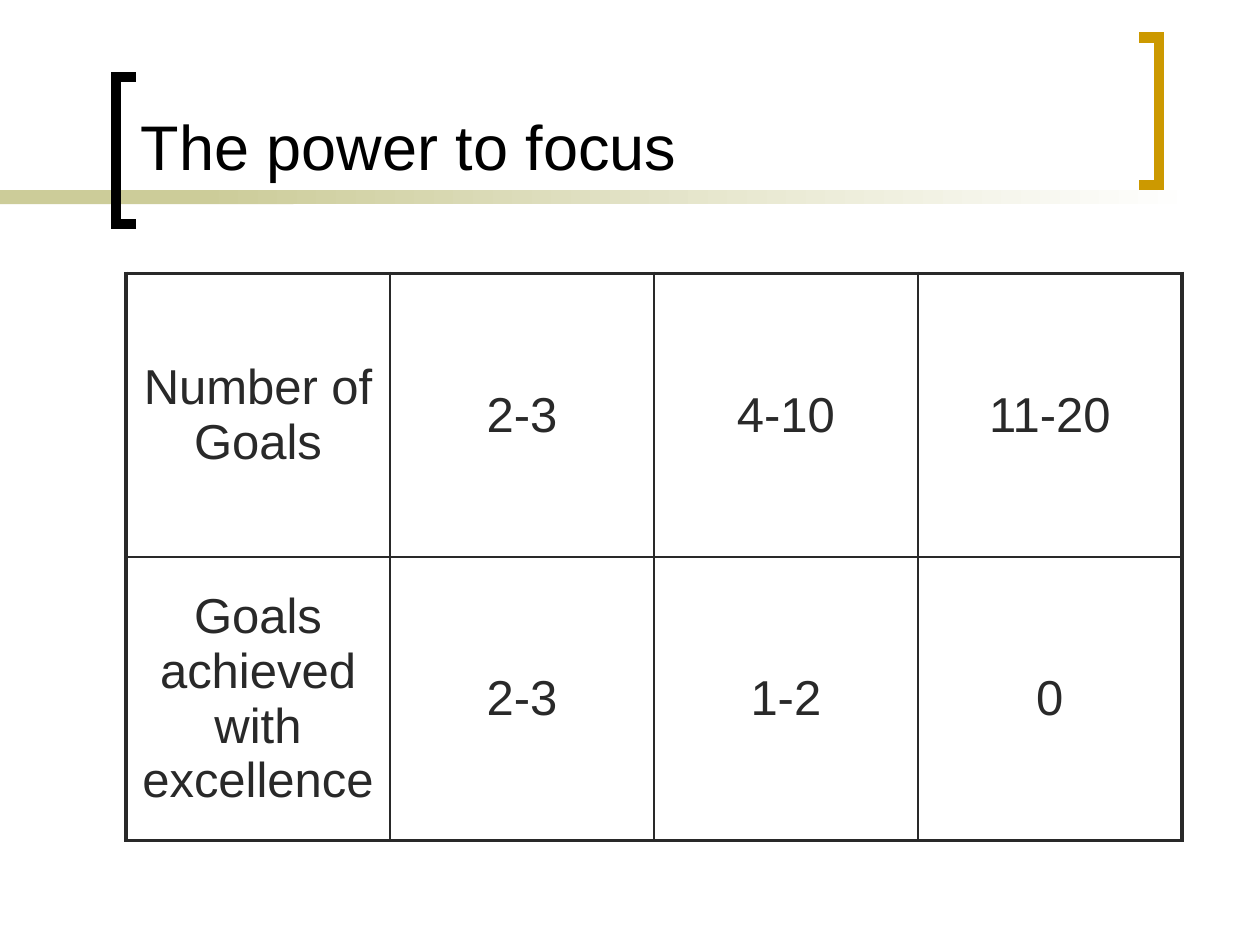
from lxml import etree
from pptx import Presentation
from pptx.dml.color import RGBColor
from pptx.enum.shapes import MSO_SHAPE
from pptx.enum.text import MSO_ANCHOR, PP_ALIGN
from pptx.oxml.ns import qn
from pptx.util import Inches, Pt

RECTANGLE = MSO_SHAPE.RECTANGLE
BOTTOM, MIDDLE = MSO_ANCHOR.BOTTOM, MSO_ANCHOR.MIDDLE
LEFT, CENTER = PP_ALIGN.LEFT, PP_ALIGN.CENTER
COLORS = {"black": "000000", "ink": "292929", "olive": "CCCC99",
          "gold": "CC9900", "white": "FFFFFF"}
THIN, THICK = Pt(1), Pt(2.25)


def write_text(frame, text, size, color, align=LEFT):
    para = frame.paragraphs[0]
    para.alignment = align
    span = para.add_run()
    span.text = text
    span.font.name = "Arial"
    span.font.size = Pt(size)
    span.font.bold = False
    span.font.color.rgb = RGBColor.from_string(COLORS[color])
    return para


def set_borders(cell, widths):
    """Draw the left, right, top and bottom borders, in that order."""
    properties = cell._tc.get_or_add_tcPr()
    for index, (side, width) in enumerate(zip("LRTB", widths)):
        line = etree.Element(qn(f"a:ln{side}"), w=str(width))
        fill = etree.SubElement(line, qn("a:solidFill"))
        etree.SubElement(fill, qn("a:srgbClr"), val=COLORS["ink"])
        properties.insert(index, line)


deck = Presentation()
deck.slide_width, deck.slide_height = Inches(10), Inches(7.5)
page = deck.slides.add_slide(deck.slide_layouts[6])

# Rule under the title: a solid start, then a fade to white
BAR_TOP, BAR_HEIGHT = 1.51, 0.11
for left, width, fades in ((0, 2.33, False), (1.58, 7.92, True)):
    bar = page.shapes.add_shape(RECTANGLE, Inches(left), Inches(BAR_TOP),
                                Inches(width), Inches(BAR_HEIGHT))
    bar.shadow.inherit = False
    bar.line.fill.background()
    if fades:
        bar.fill.gradient()
        bar.fill.gradient_angle = 0
        for stop, position, color in zip(bar.fill.gradient_stops, (0, 1), ("olive", "white")):
            stop.position = position
            stop.color.rgb = RGBColor.from_string(COLORS[color])
    else:
        bar.fill.solid()
        bar.fill.fore_color.rgb = RGBColor.from_string(COLORS["olive"])

# Brackets: the spine, and the tips that point towards the title
BRACKET_HEIGHT = 1.17
for spine, tip, top, color in ((0.92, 1.08, 0.61, "black"), (9.2, 9.04, 0.3, "gold")):
    bottom = top + BRACKET_HEIGHT
    start, *corners = [(Inches(x), Inches(y)) for x, y in
                       ((tip, bottom), (spine, bottom), (spine, top), (tip, top))]
    builder = page.shapes.build_freeform(*start)
    builder.add_line_segments(corners, close=False)
    bracket = builder.convert_to_shape()
    bracket.shadow.inherit = False
    bracket.fill.background()
    bracket.line.color.rgb = RGBColor.from_string(COLORS[color])
    bracket.line.width = Pt(6)
    etree.SubElement(bracket.line._ln, qn("a:miter"), lim="800000")

title = page.shapes.add_textbox(Inches(1.02), Inches(0.33), Inches(7.83), Inches(1.17))
title.text_frame.word_wrap = True
title.text_frame.vertical_anchor = BOTTOM
write_text(title.text_frame, "The power to focus", size=36, color="black")

GOALS = (("Number of Goals", "2-3", "4-10", "11-20"),
         ("Goals achieved with excellence", "2-3", "1-2", "0"))
last_row, last_column = len(GOALS) - 1, len(GOALS[0]) - 1
table = page.shapes.add_table(len(GOALS), len(GOALS[0]), Inches(1), Inches(2.17),
                              Inches(8.38), Inches(4.5)).table
table.first_row = table.horz_banding = False
for row, texts in enumerate(GOALS):
    for column, text in enumerate(texts):
        cell = table.cell(row, column)
        cell.fill.background()
        cell.vertical_anchor = MIDDLE
        para = write_text(cell.text_frame, text, size=28, color="ink", align=CENTER)
        spacing = etree.SubElement(para._p.get_or_add_pPr(), qn("a:spcBef"))
        etree.SubElement(spacing, qn("a:spcPct"), val="20000")
        outer_sides = (column == 0, column == last_column, row == 0, row == last_row)
        set_borders(cell, [THICK if outer else THIN for outer in outer_sides])

deck.save("out.pptx")
